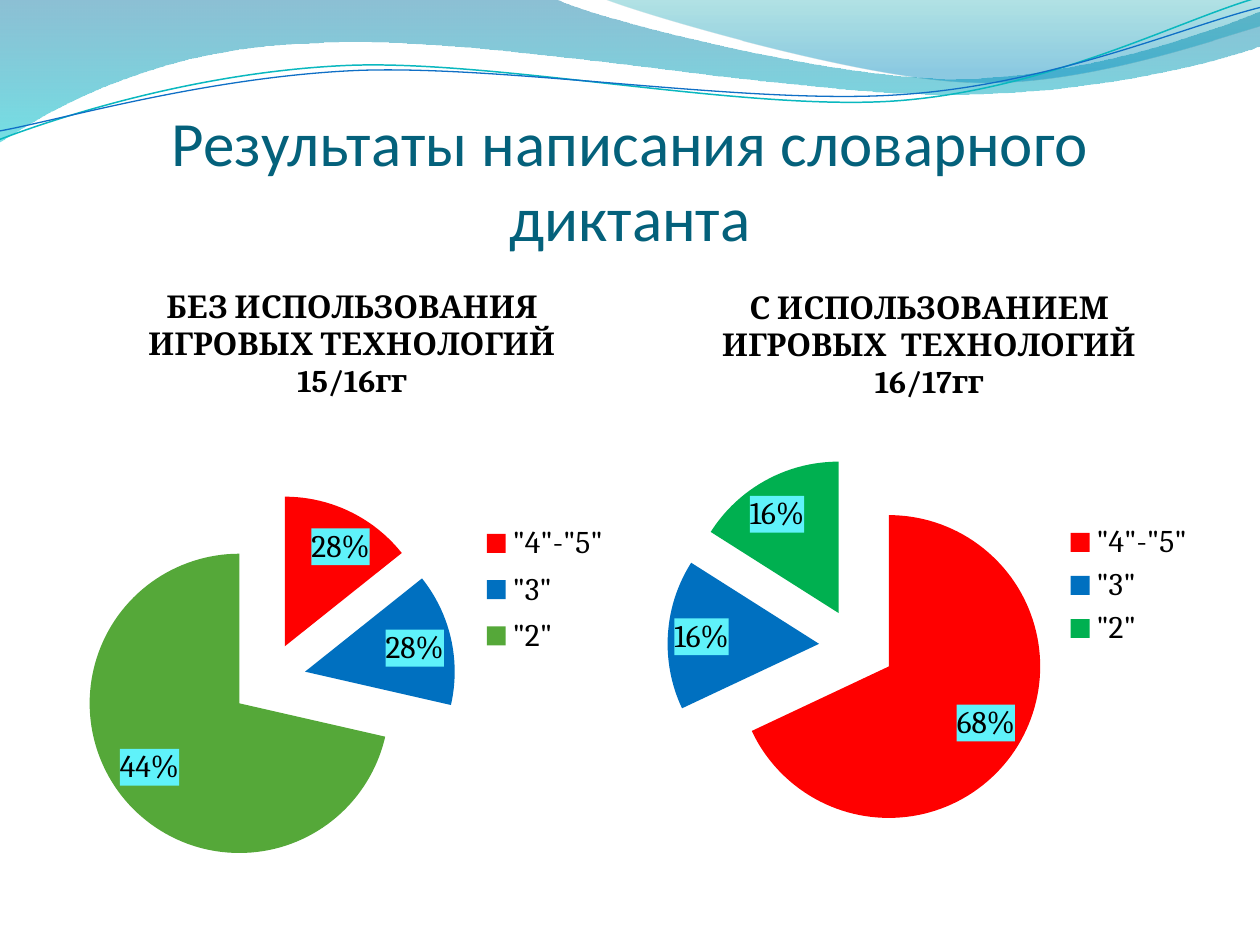
import pptx
import pptx.util
import pptx.dml.color
import pptx.chart.data
import pptx.enum.chart
import pptx.enum.text
import pptx.oxml
import pptx.oxml.ns

Pt = pptx.util.Pt
namespaces = pptx.oxml.ns.nsdecls("a", "c")


def color(hex_value):
    return pptx.dml.color.RGBColor.from_string(hex_value)


def add_curve(slide, start, segments, closed):
    numbers = [number * 100 for segment in segments for number in segment]
    points = list(zip(numbers[::2], numbers[1::2]))
    builder = slide.shapes.build_freeform(
        start[0] * 100, start[1] * 100, scale=Pt(1) / 100)
    builder.add_line_segments(points, close=closed)
    curve = builder.convert_to_shape()
    curve.shadow.inherit = False
    lines = iter(curve._element.xpath(".//a:lnTo"))
    for segment in segments:
        line = next(lines)
        if len(segment) == 6:
            bezier = pptx.oxml.parse_xml(f"<a:cubicBezTo {namespaces}/>")
            line.addprevious(bezier)
            for control in (line, next(lines), next(lines)):
                bezier.append(control[0])
                control.getparent().remove(control)
    return curve


prs = pptx.Presentation()
prs.slide_width, prs.slide_height = Pt(720), Pt(540)
slide = prs.slides.add_slide(prs.slide_layouts[5])

waves = [
    ((0, 0),
     [(317, -0.7), (343, 12, 478, 45, 546, 45), (614, 45, 690, 19, 720, 6.5),
      (720.7, 26), (708, 32, 626, 55, 537, 54), (448, 54, 275, 20, 185, 24.5),
      (93, 26, 33, 60, -0.7, 81.4)],
     [("0074A1", 0, 45), ("00C6CF", 1, 55)]),
    ((345, -0.7),
     [(366, 8, 491, 45, 554, 47), (616, 50, 692, 23, 720, 15), (720, 0)],
     [("00A1A9", 0, 30), ("008BBF", 0.8, 45)]),
]
for start, segments, stops in waves:
    wave = add_curve(slide, start, segments, True)
    wave.line.fill.background()
    wave.fill.gradient()
    wave.fill.gradient_angle = 270
    for stop, (hex_value, position, _) in zip(wave.fill.gradient_stops, stops):
        stop.color.rgb = color(hex_value)
        stop.position = position
    for rgb, (_, _, opacity) in zip(wave._element.xpath(".//a:gs/a:srgbClr"), stops):
        rgb.append(pptx.oxml.parse_xml(
            f'<a:alpha {namespaces} val="{opacity * 1000}"/>'))

strands = [
    ((-1, 80), [(33, 67, 113, 41, 199, 37.4), (284, 34, 427, 64, 513, 57.6),
                (600, 51, 675, 11, 719, -1.4)], "0AB8BF", 0.85),
    ((-1, 75), [(33, 69, 118, 44, 204, 40.3), (290, 37, 430, 60.5, 516, 54),
                (602, 48, 677, 15, 720, 4.3)], "0F6FC6", 0.75),
]
for start, segments, hex_value, width in strands:
    strand = add_curve(slide, start, segments, False)
    strand.fill.background()
    strand.line.color.rgb = color(hex_value)
    strand.line.width = Pt(width)

title = slide.shapes.title
title.left, title.top, title.width, title.height = Pt(36), Pt(55.5), Pt(648), Pt(90)
frame = title.text_frame
frame.text = "Результаты написания словарного диктанта"
frame.word_wrap = True
frame.auto_size = pptx.enum.text.MSO_AUTO_SIZE.NONE
frame.vertical_anchor = pptx.enum.text.MSO_ANCHOR.BOTTOM
frame.margin_left = frame.margin_right = frame.margin_bottom = 0
frame.margin_top = Pt(3.6)
heading = frame.paragraphs[0]
heading.alignment = pptx.enum.text.PP_ALIGN.CENTER
heading.font.name = "Calibri"
heading.font.size = Pt(36)
heading.font.color.rgb = color("04617B")

results = [
    ("БЕЗ ИСПОЛЬЗОВАНИЯ ИГРОВЫХ ТЕХНОЛОГИЙ\n15/16гг", (36.7, 150.8, 329, 368.8),
     (0.28, 0.28, 1.4), ("FF0000", "0070C0", "55A839"), {2: "44%"},
     {"plotArea": (0.03, 0.35, 0.65, 0.59), "legend": (0.72, 0.39, 0.23, 0.23)}),
    ("С ИСПОЛЬЗОВАНИЕМ ИГРОВЫХ  ТЕХНОЛОГИЙ\n16/17гг", (371.9, 151.4, 318.2, 366.3),
     (0.68, 0.16, 0.16), ("FF0000", "0070C0", "00B050"), {},
     {"plotArea": (0.03, 0.19, 0.68, 0.81)}),
]
best_fit = pptx.enum.chart.XL_LABEL_POSITION.BEST_FIT
for heading_text, box, shares, slice_colors, custom_labels, layouts in results:
    data = pptx.chart.data.CategoryChartData(number_format="0%")
    data.categories = ['"4"-"5"', '"3"', '"2"']
    data.add_series("Series 1", shares)
    chart = slide.shapes.add_chart(
        pptx.enum.chart.XL_CHART_TYPE.PIE, *map(Pt, box), data).chart
    chart.font.name = "Cambria"
    chart.font.size = Pt(18)
    chart.font.color.rgb = color("000000")

    chart.has_title = True
    chart.chart_title.text_frame.text = heading_text
    chart.chart_title.include_in_layout = False
    for line in chart.chart_title.text_frame.paragraphs:
        line.font.name = "Cambria"
        line.font.size = Pt(18)
        line.font.bold = True
        line.font.color.rgb = color("000000")

    chart.has_legend = True
    chart.legend.position = pptx.enum.chart.XL_LEGEND_POSITION.RIGHT
    chart.legend.include_in_layout = False

    plot = chart.plots[0]
    plot.vary_by_categories = True
    pie = plot.series[0]
    for index, hex_value in enumerate(slice_colors):
        fill = pie.points[index].format.fill
        fill.solid()
        fill.fore_color.rgb = color(hex_value)
    pie._element.xpath("c:dPt")[0].addprevious(
        pptx.oxml.parse_xml(f'<c:explosion {namespaces} val="25"/>'))

    labels = pie.data_labels
    labels.show_value = True
    labels.show_percentage = False
    labels.number_format = "0%"
    labels.number_format_is_linked = False
    labels.position = best_fit
    labels.font.name = "Cambria"
    labels.font.size = Pt(18)
    labels.font.color.rgb = color("000000")
    for index, text in custom_labels.items():
        label = pie.points[index].data_label
        label.text_frame.text = text
        label.position = best_fit
    for label_xml in pie._element.xpath(".//c:dLbls | .//c:dLbl"):
        label_xml.xpath("c:txPr | c:dLblPos")[0].addprevious(pptx.oxml.parse_xml(
            f'<c:spPr {namespaces}><a:solidFill><a:srgbClr val="5FF2FA"/>'
            '</a:solidFill></c:spPr>'))

    for part, edges in layouts.items():
        area = chart._chartSpace.xpath(f".//c:{part}")[0]
        for layout in area.xpath("c:layout"):
            area.remove(layout)
        target = '<c:layoutTarget val="inner"/>' if part == "plotArea" else ""
        sides = "".join(f'<c:{side} val="{value}"/>' for side, value in zip("xywh", edges))
        area.insert(1 if part == "legend" else 0, pptx.oxml.parse_xml(
            f'<c:layout {namespaces}><c:manualLayout>{target}'
            f'<c:xMode val="edge"/><c:yMode val="edge"/>{sides}'
            '</c:manualLayout></c:layout>'))

prs.save("out.pptx")
